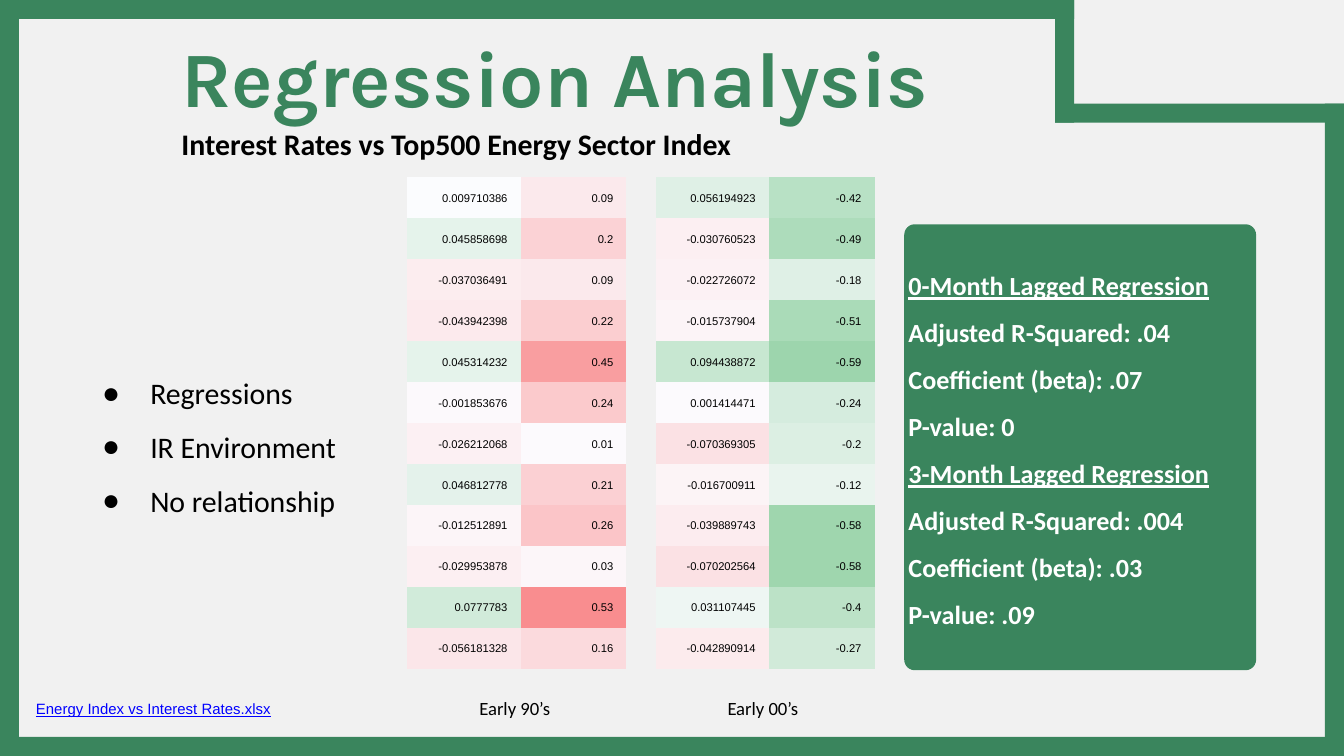
"""Build the regression analysis slide."""
import dataclasses

import pptx
import pptx.dml.color
import pptx.enum.shapes
import pptx.enum.text
import pptx.oxml.ns
import pptx.util
from pptx.util import Cm

NO_STYLE_NO_GRID = "{2D5ABB26-0587-4C30-8999-92F81FD0307C}"
PERIODS = {
    "Early 90’s": (
        ("0.009710386", "0.09"), ("0.045858698", "0.2"), ("-0.037036491", "0.09"),
        ("-0.043942398", "0.22"), ("0.045314232", "0.45"), ("-0.001853676", "0.24"),
        ("-0.026212068", "0.01"), ("0.046812778", "0.21"), ("-0.012512891", "0.26"),
        ("-0.029953878", "0.03"), ("0.0777783", "0.53"), ("-0.056181328", "0.16"),
    ),
    "Early 00’s": (
        ("0.056194923", "-0.42"), ("-0.030760523", "-0.49"), ("-0.022726072", "-0.18"),
        ("-0.015737904", "-0.51"), ("0.094438872", "-0.59"), ("0.001414471", "-0.24"),
        ("-0.070369305", "-0.2"), ("-0.016700911", "-0.12"), ("-0.039889743", "-0.58"),
        ("-0.070202564", "-0.58"), ("0.031107445", "-0.4"), ("-0.042890914", "-0.27"),
    ),
}
RESULTS = (
    "0-Month Lagged Regression\vAdjusted R-Squared: .04",
    "Coefficient (beta): .07",
    "P-value: 0",
    "3-Month Lagged Regression",
    "Adjusted R-Squared: .004",
    "Coefficient (beta): .03",
    "P-value: .09",
)


@dataclasses.dataclass(frozen=True)
class Theme:
    """Colours, fonts and type sizes of the slide."""
    green: str = "3A855D"
    paper: str = "F1F1F1"
    ink: str = "000000"
    white: str = "FFFFFF"
    link: str = "0000FF"
    neutral: tuple = (252, 252, 255)
    low: tuple = (248, 105, 107)
    high: tuple = (99, 190, 123)
    display: str = "Karla"
    text: str = "Calibri"
    data: str = "Arial"
    title_size: float = 42
    body_size: float = 16
    result_size: float = 14
    caption_size: float = 10
    link_size: float = 8
    data_size: float = 6


THEME = Theme()


def rgb(code):
    """Turn a hex code into a colour."""
    return pptx.dml.color.RGBColor.from_string(code)


def style(paragraph, face, size, colour, spacing=1.0, bold=False, underline=False):
    """Format a paragraph and all its runs."""
    paragraph.line_spacing = spacing
    paragraph.space_before = paragraph.space_after = pptx.util.Pt(0)
    for run in paragraph.runs:
        run.font.name = face
        run.font.size = pptx.util.Pt(size)
        run.font.color.rgb = rgb(colour)
        run.font.bold = bold
        run.font.underline = underline


def prepare(frame, margin):
    """Set wrapping, top anchor and equal margins of a text frame."""
    frame.word_wrap = True
    frame.auto_size = pptx.enum.text.MSO_AUTO_SIZE.NONE
    frame.vertical_anchor = pptx.enum.text.MSO_ANCHOR.TOP
    frame.margin_left = frame.margin_right = Cm(margin)
    frame.margin_top = frame.margin_bottom = Cm(margin)


def place(shape, left, top, width, height):
    """Move a placeholder into a box given in centimetres."""
    shape.left, shape.top = Cm(left), Cm(top)
    shape.width, shape.height = Cm(width), Cm(height)


def add_block(slide, kind, left, top, width, height):
    """Add a plain green shape."""
    block = slide.shapes.add_shape(kind, Cm(left), Cm(top), Cm(width), Cm(height))
    block.shadow.inherit = False
    block.fill.solid()
    block.fill.fore_color.rgb = rgb(THEME.green)
    block.line.fill.background()
    return block


def add_frame(slide, width, height, bar=0.36, notch_left=19.94, notch_top=1.96):
    """Draw the border with its notched upper right corner."""
    for box in (
        (0, 0, notch_left + bar, bar),
        (notch_left, 0, bar, notch_top + bar),
        (notch_left, notch_top, width - notch_left, bar),
        (width - bar, notch_top, bar, height - notch_top),
        (0, height - bar, width, bar),
        (0, 0, bar, height),
    ):
        add_block(slide, pptx.enum.shapes.MSO_SHAPE.RECTANGLE, *box)


def add_heading(slide, left, top, width, height):
    """Fill the title placeholder with title and subtitle."""
    heading = slide.shapes.title
    place(heading, left, top, width, height)
    prepare(heading.text_frame, 0)
    heading.text_frame.text = "Regression Analysis\nInterest Rates vs Top500 Energy Sector Index"
    title, subtitle = heading.text_frame.paragraphs
    style(title, THEME.display, THEME.title_size, THEME.green, 0.96, bold=True)
    style(subtitle, THEME.text, THEME.body_size, THEME.ink, bold=True)
    for paragraph in (title, subtitle):
        paragraph.alignment = pptx.enum.text.PP_ALIGN.LEFT


def add_topics(slide, left, top, width, height):
    """Fill the body placeholder with the bulleted topics."""
    topics = slide.placeholders[1]
    place(topics, left, top, width, height)
    prepare(topics.text_frame, 0.25)
    topics.text_frame.text = "Regressions\nIR Environment\nNo relationship"
    for paragraph in topics.text_frame.paragraphs:
        properties = paragraph._p.get_or_add_pPr()
        properties.set("marL", str(Cm(1.27)))
        properties.set("indent", str(-Cm(0.91)))
        bullet = properties.makeelement(pptx.oxml.ns.qn("a:buChar"), {"char": "●"})
        properties.append(bullet)
        style(paragraph, THEME.text, THEME.body_size, THEME.ink, 1.5)


def add_results(slide, left, top, width, height):
    """Draw the card of regression results."""
    card = add_block(slide, pptx.enum.shapes.MSO_SHAPE.ROUNDED_RECTANGLE, left, top, width, height)
    card.adjustments[0] = 0.03
    results = slide.shapes.add_textbox(Cm(left), Cm(top + 0.48), Cm(width), Cm(height)).text_frame
    prepare(results, 0.08)
    results.text = "\n".join(RESULTS)
    for paragraph in results.paragraphs:
        style(paragraph, THEME.text, THEME.result_size, THEME.white, 1.5, bold=True)
        for run in paragraph.runs:
            run.font.underline = run.text.endswith("Regression")


def scale_colour(value, middle, low_span, high_span):
    """Blend from neutral towards the low or high colour."""
    offset = value - middle
    share = offset / (high_span if offset > 0 else low_span)
    end = THEME.high if share > 0 else THEME.low
    mixed = (round(a + (b - a) * abs(share)) for a, b in zip(THEME.neutral, end))
    return pptx.dml.color.RGBColor(*mixed)


def add_heatmap(slide, rows, left, top, widths, row_height):
    """Add a table of index returns and rate changes, coloured by value."""
    heatmap = slide.shapes.add_table(
        len(rows), len(widths), Cm(left), Cm(top), Cm(sum(widths)), Cm(row_height * len(rows))
    ).table
    heatmap.first_row = heatmap.horz_banding = False
    heatmap._tbl.tblPr.find(pptx.oxml.ns.qn("a:tableStyleId")).text = NO_STYLE_NO_GRID
    scales = ((0.008, 0.43, 0.25), (0, -0.7, -0.95))
    for column, width in zip(heatmap.columns, widths):
        column.width = Cm(width)
    for row, values in zip(heatmap.rows, rows):
        row.height = Cm(row_height)
        for cell, value, (middle, low_span, high_span) in zip(row.cells, values, scales):
            cell.margin_left = cell.margin_right = Cm(0.25)
            cell.margin_top = cell.margin_bottom = Cm(0.25)
            cell.text_frame.text = value
            paragraph = cell.text_frame.paragraphs[0]
            paragraph.alignment = pptx.enum.text.PP_ALIGN.RIGHT
            style(paragraph, THEME.data, THEME.data_size, THEME.ink, 1.15)
            cell.fill.solid()
            number = float(value)
            if low_span < 0:
                number, low_span, high_span = -number, -low_span, -high_span
            cell.fill.fore_color.rgb = scale_colour(number, middle, low_span, high_span)


def add_label(slide, text, left, top, width, height, face, size, colour, underline=False):
    """Add a one-line label."""
    label = slide.shapes.add_textbox(Cm(left), Cm(top), Cm(width), Cm(height)).text_frame
    prepare(label, 0.25)
    label.text = text
    style(label.paragraphs[0], face, size, colour, underline=underline)


def main():
    """Assemble and save the slide."""
    width, height = 25.4, 14.29
    deck = pptx.Presentation()
    deck.slide_width, deck.slide_height = Cm(width), Cm(height)
    slide = deck.slides.add_slide(deck.slide_layouts[1])
    slide.background.fill.solid()
    slide.background.fill.fore_color.rgb = rgb(THEME.paper)
    add_heading(slide, 3.43, 0.66, 15.57, 2.41)
    add_results(slide, 17.09, 4.24, 6.65, 8.43)
    add_frame(slide, width, height)
    add_topics(slide, 1.32, 6.5, 6.3, 3.25)
    for index, (period, rows) in enumerate(PERIODS.items()):
        left = 7.7 + 4.69 * index
        add_heatmap(slide, rows, left, 3.35, (2.14, 2.0), 0.7)
        add_label(slide, period, left + 1.11, 12.93, 1.9, 0.94,
                  THEME.text, THEME.caption_size, THEME.ink)
    add_label(slide, "Energy Index vs Interest Rates.xlsx", 0.43, 12.98, 8.33, 0.86,
              THEME.data, THEME.link_size, THEME.link, underline=True)
    deck.save("out.pptx")


if __name__ == "__main__":
    main()
